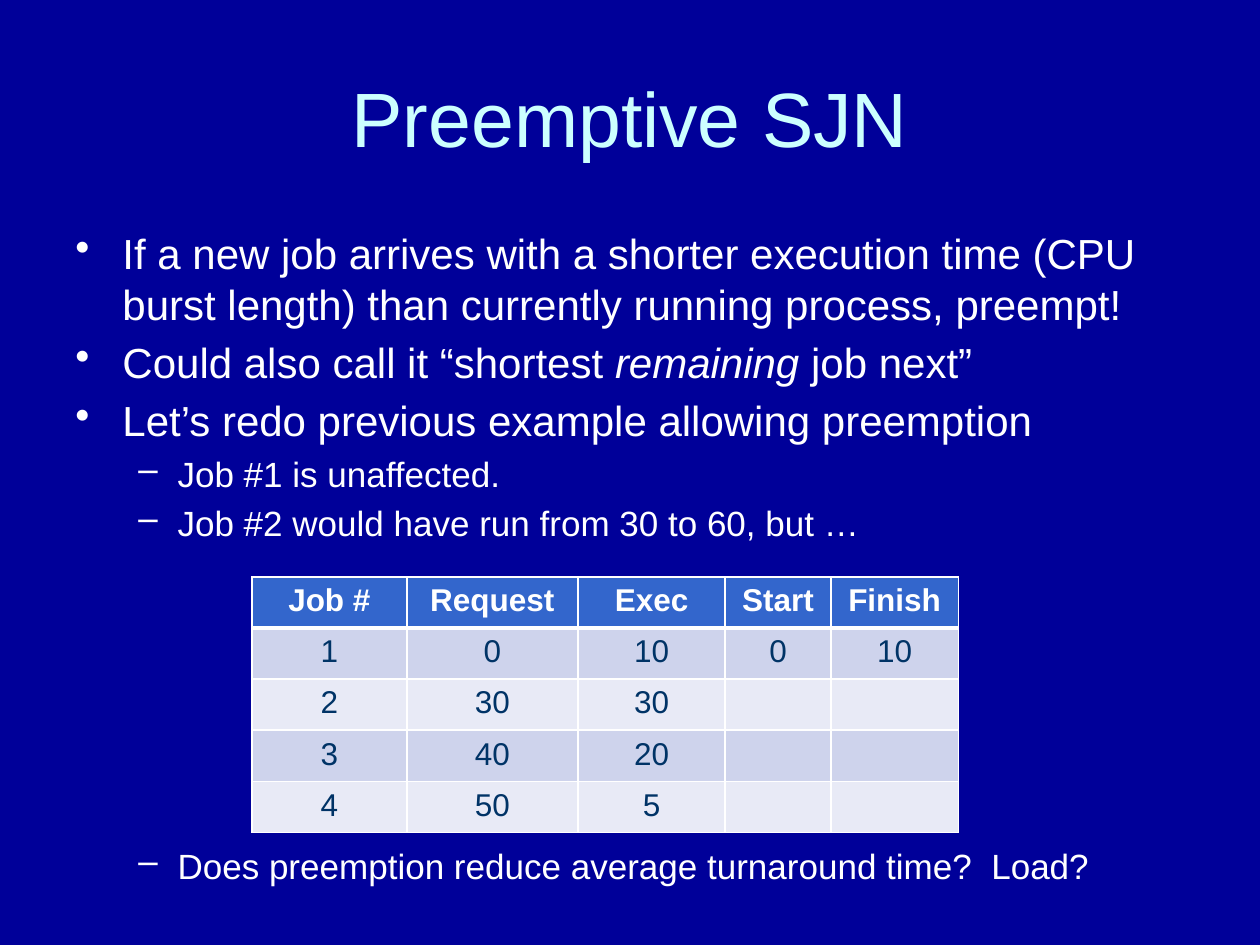
from dataclasses import dataclass

import pptx
import pptx.dml.color
import pptx.enum.text
import pptx.oxml.ns
import pptx.util
from lxml import etree
from pptx.util import Cm, Pt


@dataclass(frozen=True)
class Theme:
    font: str = "Arial"
    background: str = "000099"
    title: str = "CCFFFF"
    light: str = "FFFFFF"
    header: str = "3366CC"
    cell_text: str = "003366"
    bands: tuple = ("CED3EC", "E8EAF6")
    title_size: int = 44
    table_size: int = 18


@dataclass(frozen=True)
class Level:
    bullet: str
    size: int
    line: int
    before: float
    margin: float
    hanging: float


THEME = Theme()
POINT = Level("•", 24, 29, 4.4, 0.95, 0.95)
DETAIL = Level("–", 20, 24, 4, 2.06, 0.79)
GAP_FOR_TABLE = 172

# Each entry: level, runs as (text, italic), space before in points
OUTLINE = [
    (POINT, [("If a new job arrives with a shorter execution time (CPU burst length) "
              "than currently running process, preempt!", False)], 0),
    (POINT, [("Could also call it “shortest ", False), ("remaining", True),
             (" job next”", False)], POINT.before),
    (POINT, [("Let’s redo previous example allowing preemption", False)], POINT.before),
    (DETAIL, [("Job #1 is unaffected.", False)], DETAIL.before),
    (DETAIL, [("Job #2 would have run from 30 to 60, but …", False)], DETAIL.before),
    (DETAIL, [("Does preemption reduce average turnaround time?  Load?", False)],
     GAP_FOR_TABLE),
]

JOBS = [
    ("Job #", "Request", "Exec", "Start", "Finish"),
    ("1", "0", "10", "0", "10"),
    ("2", "30", "30", "", ""),
    ("3", "40", "20", "", ""),
    ("4", "50", "5", "", ""),
]
JOB_COLUMNS = (3.12, 3.45, 2.97, 2.13, 2.57)


def rgb(value):
    return pptx.dml.color.RGBColor.from_string(value)


def add_run(paragraph, text, size, color, bold=False, italic=False):
    run = paragraph.add_run()
    run.text = text
    font = run.font
    font.name, font.size = THEME.font, Pt(size)
    font.bold, font.italic = bold, italic
    font.color.rgb = rgb(color)


def add_title(slide, text, left, top, width, height):
    frame = slide.shapes.add_textbox(Cm(left), Cm(top), Cm(width), Cm(height)).text_frame
    frame.word_wrap = True
    frame.vertical_anchor = pptx.enum.text.MSO_ANCHOR.MIDDLE
    heading = frame.paragraphs[0]
    heading.alignment = pptx.enum.text.PP_ALIGN.CENTER
    add_run(heading, text, THEME.title_size, THEME.title)


def set_bullet(paragraph, level):
    properties = paragraph._p.get_or_add_pPr()
    properties.set("marL", str(Cm(level.margin)))
    properties.set("indent", str(-Cm(level.hanging)))
    bullet = etree.SubElement(properties, pptx.oxml.ns.qn("a:buChar"))
    bullet.set("char", level.bullet)


def add_outline(slide, entries, left, top, width, height):
    frame = slide.shapes.add_textbox(Cm(left), Cm(top), Cm(width), Cm(height)).text_frame
    frame.word_wrap = True
    for index, (level, runs, before) in enumerate(entries):
        item = frame.add_paragraph() if index else frame.paragraphs[0]
        item.line_spacing = Pt(level.line)
        item.space_before = Pt(before)
        set_bullet(item, level)
        for text, italic in runs:
            add_run(item, text, level.size, THEME.light, italic=italic)


def set_borders(cell, widths):
    """Draw cell edges; widths maps left, right, top, bottom (L, R, T, B) to points."""
    properties = cell._tc.get_or_add_tcPr()
    for position, (edge, width) in enumerate(widths.items()):
        line = etree.Element(pptx.oxml.ns.qn(f"a:ln{edge}"), w=str(Pt(width)))
        fill = etree.SubElement(line, pptx.oxml.ns.qn("a:solidFill"))
        etree.SubElement(fill, pptx.oxml.ns.qn("a:srgbClr"), val=THEME.light)
        properties.insert(position, line)


def add_job_table(slide, jobs, column_widths, left, top, row_height):
    table = slide.shapes.add_table(
        len(jobs), len(column_widths), Cm(left), Cm(top),
        Cm(sum(column_widths)), Cm(row_height * len(jobs))).table
    for column, width in zip(table.columns, column_widths):
        column.width = Cm(width)
    for row, job in enumerate(jobs):
        is_header = row == 0
        fill = THEME.header if is_header else THEME.bands[(row - 1) % 2]
        color = THEME.light if is_header else THEME.cell_text
        for column, value in enumerate(job):
            cell = table.cell(row, column)
            cell.fill.solid()
            cell.fill.fore_color.rgb = rgb(fill)
            set_borders(cell, {"L": 1, "R": 1, "T": 3 if row == 1 else 1,
                               "B": 3 if is_header else 1})
            entry = cell.text_frame.paragraphs[0]
            entry.alignment = pptx.enum.text.PP_ALIGN.CENTER
            if value:
                add_run(entry, value, THEME.table_size, color, bold=is_header)


def main():
    deck = pptx.Presentation()
    deck.slide_width, deck.slide_height = Cm(25.4), Cm(19.05)
    slide = deck.slides.add_slide(deck.slide_layouts[6])
    slide.background.fill.solid()
    slide.background.fill.fore_color.rgb = rgb(THEME.background)
    add_title(slide, "Preemptive SJN", 1.27, 0.76, 22.86, 3.18)
    add_outline(slide, OUTLINE, 1.27, 4.45, 22.86, 12.57)
    add_job_table(slide, JOBS, JOB_COLUMNS, 5.08, 11.63, 1.03)
    deck.save("out.pptx")


if __name__ == "__main__":
    main()
